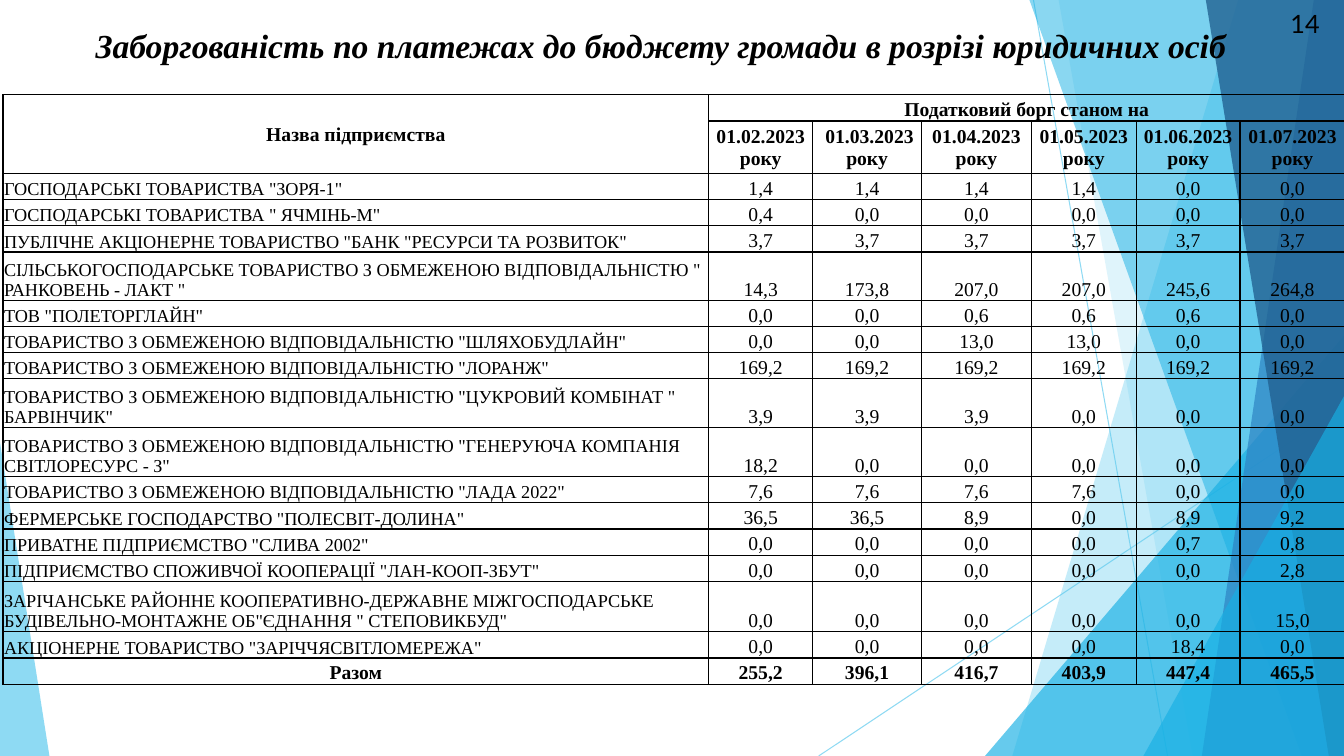
from dataclasses import dataclass

from lxml import etree
from pptx import Presentation
from pptx.dml.color import RGBColor
from pptx.enum.shapes import MSO_CONNECTOR, MSO_SHAPE
from pptx.enum.text import MSO_ANCHOR, PP_ALIGN
from pptx.oxml.ns import qn
from pptx.util import Inches, Pt

STRAIGHT = MSO_CONNECTOR.STRAIGHT
TRIANGLE = MSO_SHAPE.ISOSCELES_TRIANGLE
LEFT, CENTER = PP_ALIGN.LEFT, PP_ALIGN.CENTER
TOP, MIDDLE, BOTTOM = MSO_ANCHOR.TOP, MSO_ANCHOR.MIDDLE, MSO_ANCHOR.BOTTOM


@dataclass(frozen=True)
class Theme:
    ink: str = "000000"
    sky: str = "5FCBEF"
    azure: str = "17B0E4"
    blue: str = "2E83C3"
    navy: str = "226292"
    serif: str = "Times New Roman"
    sans: str = "Lato"
    title: int = 24
    number: int = 18
    body: int = 14
    company: int = 13
    hairline: float = 0.75
    border: int = 1


THEME = Theme()

PAGE = (0, 0, 13.33, 7.5)
TITLE_BOX = (0, 0.2, 13.19, 0.28)
NUMBER_BOX = (12.7, 0.03, 0.61, 0.4)
TABLE_BOX = (0.03, 0.94, 13.31, 5.87)

TITLE = "Заборгованість по платежах до бюджету громади в розрізі юридичних осіб "
COLUMN_WIDTHS = [7, 1.03, 1.08, 1.09, 1.04, 1.03, 1.04]
ROW_HEIGHT = 0.26
TALL_ROWS = {1: 0.52, 5: 0.48, 9: 0.48, 10: 0.49, 15: 0.5}
DATES = ["01.02.2023 року", " 01.03.2023 року", "01.04.2023 року",
         "01.05.2023 року", "01.06.2023 року", "01.07.2023 року"]
DEBTS = [
    ('ГОСПОДАРСЬКI ТОВАРИСТВА "ЗОРЯ-1"', "1,4 1,4 1,4 1,4 0,0 0,0"),
    ('ГОСПОДАРСЬКІ ТОВАРИСТВА " ЯЧМІНЬ-М"', "0,4 0,0 0,0 0,0 0,0 0,0"),
    ('ПУБЛІЧНЕ АКЦІОНЕРНЕ ТОВАРИСТВО "БАНК "РЕСУРСИ ТА РОЗВИТОК"',
     "3,7 3,7 3,7 3,7 3,7 3,7"),
    ('СІЛЬСЬКОГОСПОДАРСЬКЕ ТОВАРИСТВО З ОБМЕЖЕНОЮ ВІДПОВІДАЛЬНІСТЮ " РАНКОВЕНЬ - ЛАКТ "',
     "14,3 173,8 207,0 207,0 245,6 264,8"),
    ('ТОВ "ПОЛЕТОРГЛАЙН"', "0,0 0,0 0,6 0,6 0,6 0,0"),
    ('ТОВАРИСТВО З ОБМЕЖЕНОЮ ВIДПОВIДАЛЬНIСТЮ "ШЛЯХОБУДЛАЙН"',
     "0,0 0,0 13,0 13,0 0,0 0,0"),
    ('ТОВАРИСТВО З ОБМЕЖЕНОЮ ВIДПОВIДАЛЬНIСТЮ "ЛОРАНЖ"',
     "169,2 169,2 169,2 169,2 169,2 169,2"),
    ('ТОВАРИСТВО З ОБМЕЖЕНОЮ ВIДПОВIДАЛЬНIСТЮ "ЦУКРОВИЙ КОМБІНАТ " БАРВІНЧИК"',
     "3,9 3,9 3,9 0,0 0,0 0,0"),
    ('ТОВАРИСТВО З ОБМЕЖЕНОЮ ВІДПОВІДАЛЬНІСТЮ "ГЕНЕРУЮЧА КОМПАНІЯ СВІТЛОРЕСУРС - З"',
     "18,2 0,0 0,0 0,0 0,0 0,0"),
    ('ТОВАРИСТВО З ОБМЕЖЕНОЮ ВІДПОВІДАЛЬНІСТЮ "ЛАДА 2022"',
     "7,6 7,6 7,6 7,6 0,0 0,0"),
    ('ФЕРМЕРСЬКЕ ГОСПОДАРСТВО "ПОЛЕСВІТ-ДОЛИНА"', "36,5 36,5 8,9 0,0 8,9 9,2"),
    ('ПРИВАТНЕ ПІДПРИЄМСТВО "СЛИВА 2002"', "0,0 0,0 0,0 0,0 0,7 0,8"),
    ('ПІДПРИЄМСТВО СПОЖИВЧОЇ КООПЕРАЦІЇ "ЛАН-КООП-ЗБУТ"',
     "0,0 0,0 0,0 0,0 0,0 2,8"),
    ('ЗАРІЧАНСЬКЕ РАЙОННЕ КООПЕРАТИВНО-ДЕРЖАВНЕ МІЖГОСПОДАРСЬКЕ '
     'БУДІВЕЛЬНО-МОНТАЖНЕ ОБ"ЄДНАННЯ " СТЕПОВИКБУД"', "0,0 0,0 0,0 0,0 0,0 15,0"),
    ('АКЦІОНЕРНЕ ТОВАРИСТВО "ЗАРІЧЧЯСВІТЛОМЕРЕЖА"', "0,0 0,0 0,0 0,0 18,4 0,0"),
]
TOTALS = "255,2 396,1 416,7 403,9 447,4 465,5"


def set_alpha(fill, percent):
    color = fill._xPr.find(qn("a:solidFill"))[0]
    etree.SubElement(color, qn("a:alpha"), val=str(percent * 1000))


def paint(shape, color, percent):
    shape.shadow.inherit = False
    shape.line.fill.background()
    shape.fill.solid()
    shape.fill.fore_color.rgb = RGBColor.from_string(color)
    set_alpha(shape.fill, percent)


def add_ray(page, start, end):
    ray = page.shapes.add_connector(STRAIGHT, *map(Inches, start + end))
    ray.line.width = Pt(THEME.hairline)
    ray.line.fill.solid()
    ray.line.color.rgb = RGBColor.from_string(THEME.sky)
    set_alpha(ray.line.fill, 70)
    etree.SubElement(ray._element.spPr, qn("a:effectLst"))


def add_wedge(page, box, top_x, bottom_x, color, percent):
    left, top, width, height = box
    right, bottom = left + width, top + height
    corners = [(left + top_x, top), (right, top), (right, bottom), (left + bottom_x, bottom)]
    points = [(Inches(x), Inches(y)) for x, y in corners]
    builder = page.shapes.build_freeform(*points[0])
    builder.add_line_segments(points[1:], close=True)
    paint(builder.convert_to_shape(), color, percent)


def add_corner(page, box, width, height, apex, color, percent):
    left, top, page_width, page_height = box
    x = left + apex * (page_width - width)
    y = top + page_height - height
    corner = page.shapes.add_shape(TRIANGLE, *map(Inches, (x, y, width, height)))
    corner.adjustments[0] = apex
    paint(corner, color, percent)


def add_backdrop(page, box):
    left, top, width, height = box
    add_ray(page, (left + 10.25, top), (left + 11.58, top + height))
    add_ray(page, (left + width, top + 4.03), (left + 8.12, top + height))
    add_wedge(page, box, 12.28, 10.04, THEME.sky, 36)
    add_wedge(page, box, 10.5, 11.83, THEME.sky, 20)
    add_corner(page, box, 3.56, 4.17, 1, THEME.azure, 66)
    add_wedge(page, box, 10.21, 12.91, THEME.azure, 50)
    add_wedge(page, box, 13.03, 11.92, THEME.blue, 70)
    add_wedge(page, box, 11.96, 13.18, THEME.navy, 80)
    add_corner(page, box, 1.99, 3.57, 1, THEME.azure, 66)
    add_corner(page, box, 0.49, 3.11, 0, THEME.sky, 70)


def write(frame, text, size, align=CENTER, face=THEME.serif, bold=False, italic=False):
    para = frame.paragraphs[0]
    para.alignment = align
    span = para.add_run()
    span.text = text
    span.font.name = face
    span.font.size = Pt(size)
    span.font.bold = bold
    span.font.italic = italic
    span.font.color.rgb = RGBColor.from_string(THEME.ink)


def add_label(page, box, text, size, **style):
    frame = page.shapes.add_textbox(*map(Inches, box)).text_frame
    frame.word_wrap = True
    frame.vertical_anchor = TOP
    write(frame, text, size, **style)


def style_cell(cell):
    cell.margin_left = cell.margin_right = cell.margin_top = Inches(0.01)
    cell.margin_bottom = 0
    properties = cell._tc.get_or_add_tcPr()
    for side in ("lnL", "lnR", "lnT", "lnB"):
        edge = etree.SubElement(properties, qn(f"a:{side}"), w=str(Pt(THEME.border)))
        fill = etree.SubElement(edge, qn("a:solidFill"))
        etree.SubElement(fill, qn("a:srgbClr"), val=THEME.ink)
    cell.fill.background()


def fill_cell(cell, text, size=THEME.body, anchor=BOTTOM, **style):
    cell.vertical_anchor = anchor
    write(cell.text_frame, text, size, **style)


def add_debt_table(page, box):
    row_count = len(DEBTS) + 3
    frame = page.shapes.add_table(row_count, len(COLUMN_WIDTHS), *map(Inches, box))
    table = frame.table
    table.first_row = table.horz_banding = False
    for column, width in zip(table.columns, COLUMN_WIDTHS):
        column.width = Inches(width)
    for index, row in enumerate(table.rows):
        row.height = Inches(TALL_ROWS.get(index, ROW_HEIGHT))
        for cell in row.cells:
            style_cell(cell)

    table.cell(0, 0).merge(table.cell(1, 0))
    table.cell(0, 1).merge(table.cell(0, len(DATES)))
    fill_cell(table.cell(0, 0), "Назва підприємства", anchor=MIDDLE, bold=True)
    fill_cell(table.cell(0, 1), "Податковий борг станом на", bold=True)
    for column, date in enumerate(DATES, 1):
        fill_cell(table.cell(1, column), date, anchor=MIDDLE, bold=True)

    for row, (company, amounts) in enumerate(DEBTS, 2):
        fill_cell(table.cell(row, 0), company, THEME.company, align=LEFT)
        for column, amount in enumerate(amounts.split(), 1):
            fill_cell(table.cell(row, column), amount)
    for column, text in enumerate(["Разом"] + TOTALS.split()):
        fill_cell(table.cell(row_count - 1, column), text, bold=True)


def main():
    deck = Presentation()
    deck.slide_width, deck.slide_height = Inches(PAGE[2]), Inches(PAGE[3])
    page = deck.slides.add_slide(deck.slide_layouts[6])
    add_backdrop(page, PAGE)
    add_label(page, TITLE_BOX, TITLE, THEME.title, bold=True, italic=True)
    add_label(page, NUMBER_BOX, "14", THEME.number, align=LEFT, face=THEME.sans)
    add_debt_table(page, TABLE_BOX)
    deck.save("out.pptx")


if __name__ == "__main__":
    main()
